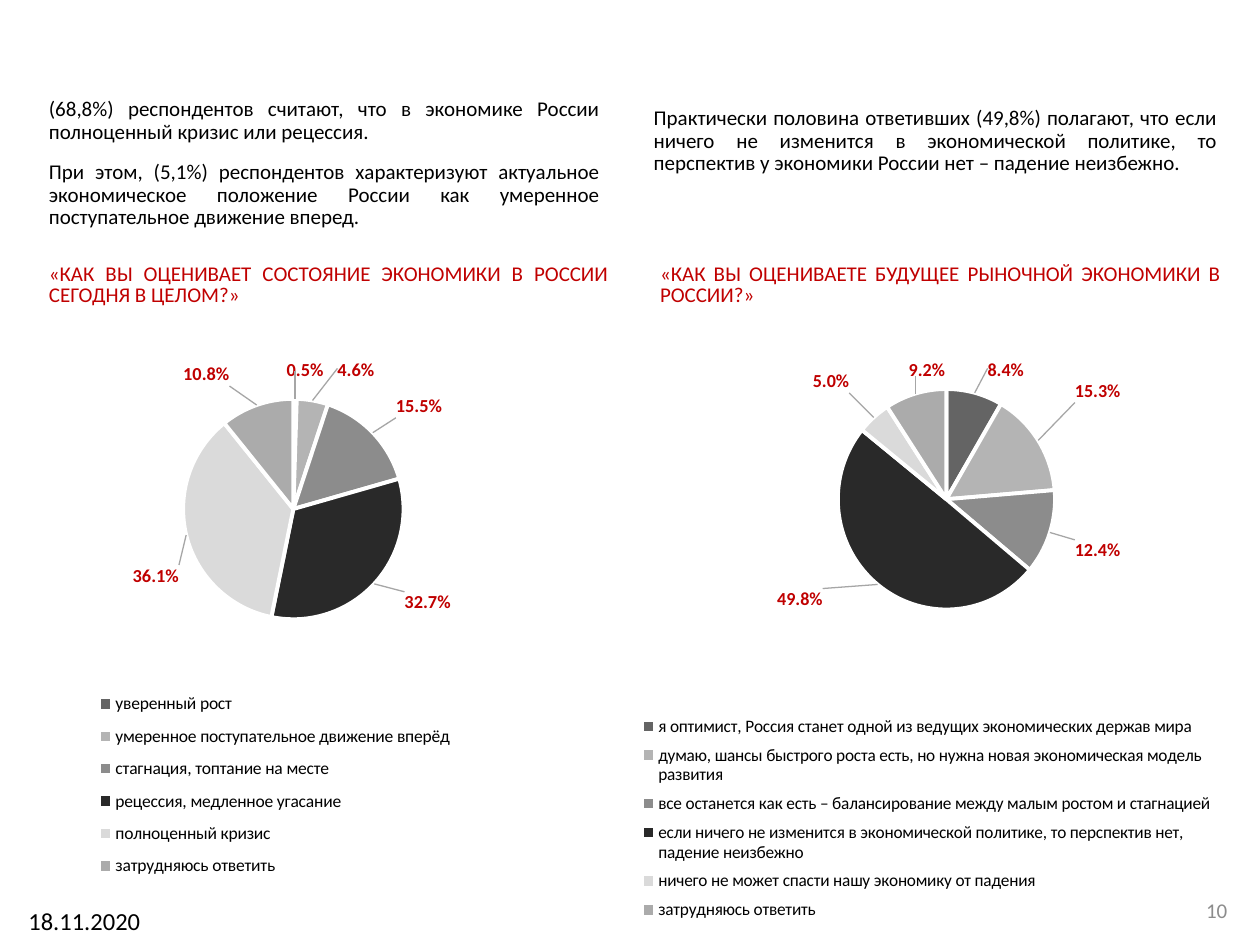
from lxml import etree
from pptx import Presentation
from pptx import util as u
from pptx.chart.data import CategoryChartData
from pptx.dml.color import RGBColor
from pptx.enum import chart as ch, text
from pptx.oxml import parse_xml
from pptx.oxml.ns import nsdecls

COLORS = {"body": "000000", "accent": "C00000", "number": "8C8C8C",
          "gap": "FFFFFF", "leader": "A6A6A6"}
SLICES = ["646464", "B4B4B4", "8C8C8C", "292929", "DADADA", "ABABAB"]
FONT, PERCENT = "Calibri", "0.0%"
ALIGN, ANCHOR = text.PP_ALIGN, text.MSO_ANCHOR

prs = Presentation()
prs.slide_width, prs.slide_height = u.Inches(10), u.Inches(7.5)
slide = prs.slides.add_slide(prs.slide_layouts[6])


def area(left, top, width, height):
    """Turn percentages of the slide into lengths."""
    w, h = prs.slide_width / 100, prs.slide_height / 100
    return int(left * w), int(top * h), int(width * w), int(height * h)


def manual_layout(x, y, w=None, h=None, inner=False):
    """Layout element in percentages of the chart; without a size it is an offset."""
    parts = '<c:layoutTarget val="inner"/>' if inner else ""
    if w is not None:
        parts += '<c:xMode val="edge"/><c:yMode val="edge"/>'
    for tag, share in zip("xywh", (x, y, w, h)):
        if share is not None:
            parts += f'<c:{tag} val="{share / 100:.4f}"/>'
    return parse_xml(f'<c:layout {nsdecls("c")}><c:manualLayout>{parts}</c:manualLayout></c:layout>')


# Texts: area, paragraphs, size, colour, alignment, anchor, line spacing, space before
findings = (12, "body", ALIGN.JUSTIFY, ANCHOR.BOTTOM, 0.9, 10)
question = (12, "accent", ALIGN.JUSTIFY, ANCHOR.TOP, 0.8, 10)
texts = [
    ((2.9, 13.2, 45.7, 11.73),
     ["(68,8%) респондентов считают, что в экономике России полноценный кризис или рецессия.",
      "При этом, (5,1%) респондентов характеризуют актуальное экономическое положение "
      "России как умеренное поступательное движение вперед."], *findings),
    ((2.9, 27.47, 46.4, 6.13),
     ["«КАК ВЫ ОЦЕНИВАЕТ СОСТОЯНИЕ ЭКОНОМИКИ В РОССИИ СЕГОДНЯ В ЦЕЛОМ?»"], *question),
    ((50.9, 9.6, 46.7, 9.6),
     ["Практически половина ответивших (49,8%) полагают, что если ничего не изменится "
      "в экономической политике, то перспектив у экономики России нет – падение неизбежно."],
     *findings),
    ((51.4, 27.47, 46.5, 6.13),
     ["«КАК ВЫ ОЦЕНИВАЕТЕ БУДУЩЕЕ РЫНОЧНОЙ ЭКОНОМИКИ В РОССИИ?»"], *question),
    ((75.1, 93.6, 23.3, 5.33), ["10"], 12, "number", ALIGN.RIGHT, ANCHOR.MIDDLE, 1, 0),
    ((0, 95.2, 13.4, 4.8), ["18.11.2020"], 14, "body", ALIGN.CENTER, ANCHOR.TOP, 1, 0),
]
for place, paragraphs, size, color, align, anchor, spacing, before in texts:
    frame = slide.shapes.add_textbox(*area(*place)).text_frame
    frame.word_wrap = True
    frame.vertical_anchor = anchor
    frame.text = "\n".join(paragraphs)
    for paragraph in frame.paragraphs:
        paragraph.alignment = align
        paragraph.line_spacing = spacing
        paragraph.space_before = u.Pt(before)
        paragraph.font.name, paragraph.font.size = FONT, u.Pt(size)
        paragraph.font.color.rgb = RGBColor.from_string(COLORS[color])

# Charts: area, plot and legend boxes, then (answer, share, label offset)
surveys = [
    ((0, 38, 46.9, 60.93), (14.4, 6.9, 70.5, 38.3), (15.5, 56, 62, 36), [
        ("уверенный рост", 0.005, (1.7, -3.6)),
        ("умеренное поступательное движение вперёд", 0.046, (4, -4.3)),
        ("стагнация, топтание на месте", 0.155, (3, -1.7)),
        ("рецессия, медленное угасание", 0.327, (4.2, 0.5)),
        ("полноценный кризис", 0.361, (0, 4.9)),
        ("затрудняюсь ответить", 0.108, (-4.2, -2.1))]),
    ((50.5, 38, 46.5, 60.93), (18.5, 5.2, 70.5, 38.3), (0.8, 60.5, 99, 38.5), [
        ("я оптимист, Россия станет одной из ведущих экономических держав мира",
         0.084, (1.9, -3)),
        ("думаю, шансы быстрого роста есть, но нужна новая экономическая модель развития",
         0.153, (5.3, -5.9)),
        ("все останется как есть – балансирование между малым ростом и стагнацией",
         0.124, (3.1, 0.9)),
        ("если ничего не изменится в экономической политике, то перспектив нет, "
         "падение неизбежно", 0.498, (-8.7, -0.3)),
        ("ничего не может спасти нашу экономику от падения", 0.05, (-3.4, -3.3)),
        ("затрудняюсь ответить", 0.092, (5.5, -1.9))]),
]
for place, plot_box, legend_box, answers in surveys:
    data = CategoryChartData(number_format=PERCENT)
    data.categories = [answer for answer, _, _ in answers]
    data.add_series("Series 1", [share for _, share, _ in answers])
    chart = slide.shapes.add_chart(ch.XL_CHART_TYPE.PIE, *area(*place), data).chart
    chart.has_title = False
    chart.has_legend = True
    chart.legend.position = ch.XL_LEGEND_POSITION.BOTTOM
    chart.legend.include_in_layout = False
    for font in (chart.font, chart.legend.font):
        font.name, font.size = FONT, u.Pt(10)
        font.color.rgb = RGBColor.from_string(COLORS["body"])

    plot = chart.plots[0]
    plot.vary_by_categories = True
    series = plot.series[0]
    labels = series.data_labels
    labels.show_value = True
    labels.number_format, labels.number_format_is_linked = PERCENT, False
    labels.position = ch.XL_LABEL_POSITION.OUTSIDE_END

    fonts = [labels.font]
    for i, (_, _, offset) in enumerate(answers):
        point = series.points[i]
        point.format.fill.solid()
        point.format.fill.fore_color.rgb = RGBColor.from_string(SLICES[i])
        point.format.line.width = u.Pt(2.25)
        point.format.line.color.rgb = RGBColor.from_string(COLORS["gap"])
        label = point.data_label
        label.position = ch.XL_LABEL_POSITION.OUTSIDE_END
        fonts.append(label.font)
        label_xml = labels._element.xpath(f'c:dLbl[c:idx/@val="{i}"]')[0]
        label_xml.insert(1, manual_layout(*offset))
        label_xml.insert(2, parse_xml(
            f'<c:numFmt {nsdecls("c")} formatCode="{PERCENT}" sourceLinked="0"/>'))
    for font in fonts:
        font.name, font.size, font.bold = FONT, u.Pt(10.5), True
        font.color.rgb = RGBColor.from_string(COLORS["accent"])

    for old in labels._element.xpath("c:showLeaderLines | c:leaderLines"):
        labels._element.remove(old)
    labels._element.append(parse_xml(f'<c:showLeaderLines {nsdecls("c")} val="1"/>'))
    labels._element.append(parse_xml(
        f'<c:leaderLines {nsdecls("c", "a")}><c:spPr><a:ln w="9525"><a:solidFill>'
        f'<a:srgbClr val="{COLORS["leader"]}"/></a:solidFill></a:ln></c:spPr></c:leaderLines>'))

    plot_area = chart._chartSpace.chart.plotArea
    legend = chart.legend._element
    for old in plot_area.xpath("c:layout") + legend.xpath("c:layout"):
        old.getparent().remove(old)
    plot_area.insert(0, manual_layout(*plot_box, inner=True))
    legend.insert(1, manual_layout(*legend_box))

prs.save("out.pptx")
